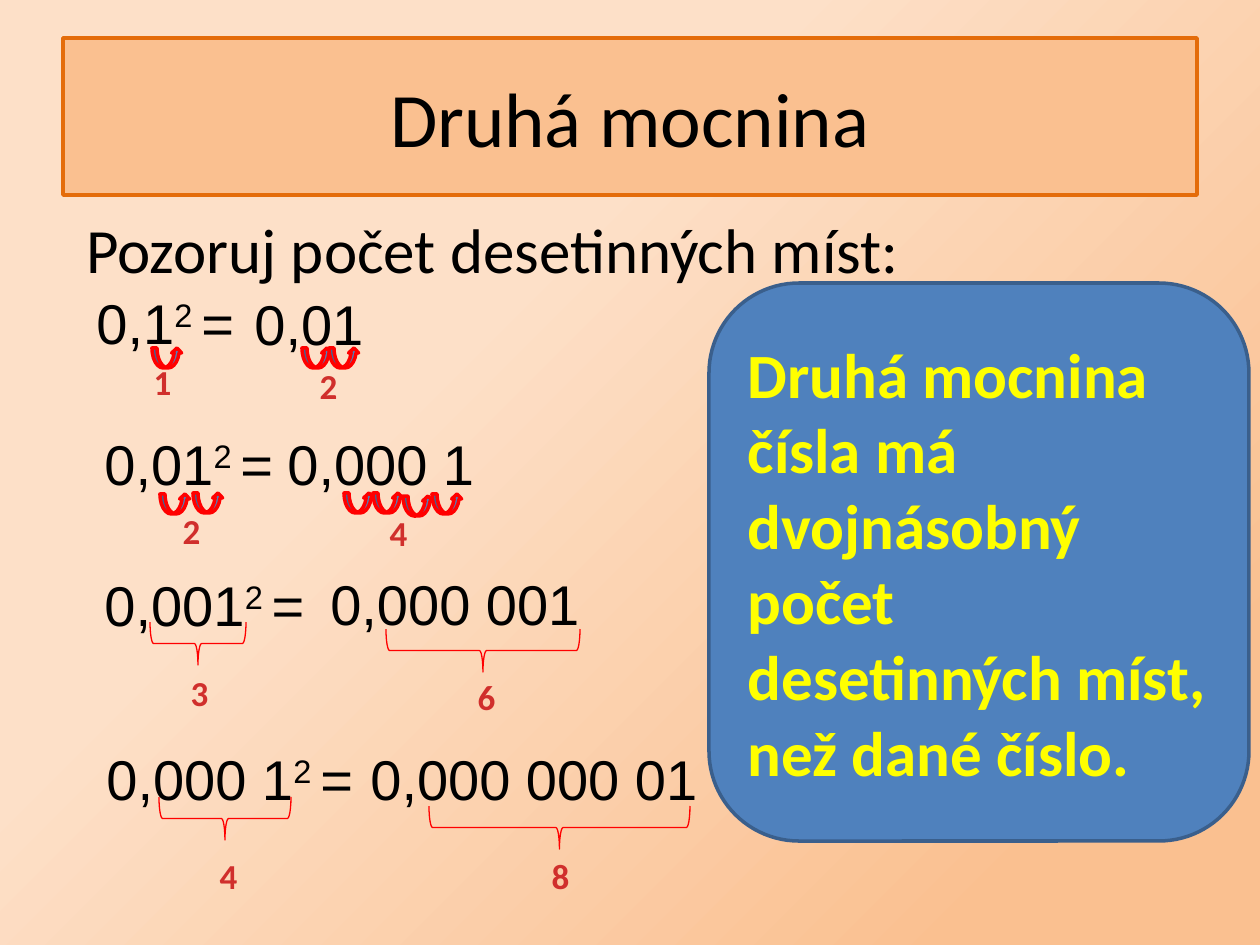
from dataclasses import dataclass

from lxml.etree import Element
from pptx import Presentation
from pptx.dml.color import RGBColor
from pptx.enum.shapes import MSO_SHAPE
from pptx.enum.text import MSO_ANCHOR, MSO_AUTO_SIZE, PP_ALIGN
from pptx.oxml.ns import qn
from pptx.util import Pt

PX = 914400 / 126


@dataclass(frozen=True)
class Theme:
    pale: str = "FDE0C8"
    peach: str = "FAC090"
    rust: str = "E46C0A"
    blue: str = "4F81BD"
    navy: str = "3A5F8C"
    red: str = "FF0000"
    brick: str = "D02F2C"
    yellow: str = "FFFF00"
    black: str = "000000"
    head: int = 44
    lead: int = 36
    math: int = 32
    count: int = 20
    sans: str = "Calibri"
    digits: str = "Arial"


T = Theme()

# left, top, width of each power, its base; left, top, width of its result, its value
ROWS = [
    (84, 282, 169, "0,1", 242, 283, 135, "0,01"),
    (92, 423, 200, "0,01", 275, 423, 229, "0,000 1"),
    (92, 564, 231, "0,001", 318, 563, 276, "0,000 001"),
    (94, 738, 294, "0,000 1", 358, 738, 406, "0,000 000 01"),
]
HOPS = [(152, 348), (302, 348), (329, 348), (160, 494), (193, 493),
        (344, 493), (373, 493), (403, 496), (432, 494)]
BRACES = [(150, 622, 96), (386, 629, 194), (429, 806, 261), (159, 797, 132)]
COUNTS = [(141, 354, "1"), (307, 358, "2"), (170, 503, "2"), (377, 505, "4"),
          (178, 665, "3"), (465, 669, "6"), (207, 848, "4"), (539, 848, "8")]


def emu(*sizes):
    return [round(size * PX) for size in sizes]


def rgb(color):
    return RGBColor.from_string(color)


def style(para, size, color, face=T.sans, bold=False, align=PP_ALIGN.LEFT):
    para.alignment = align
    font = para.font
    font.name, font.size, font.bold = face, Pt(size), bold
    font.color.rgb = rgb(color)


def paint(shape, fill, line, width):
    if fill:
        shape.fill.solid()
        shape.fill.fore_color.rgb = rgb(fill)
    else:
        shape.fill.background()
    shape.line.color.rgb = rgb(line)
    shape.line.width = Pt(width)


def add_form(slide, kind, box, fill, line, width):
    shape = slide.shapes.add_shape(kind, *emu(*box))
    shape.shadow.inherit = False
    paint(shape, fill, line, width)
    return shape


def add_text(slide, box, text, wrap=False, **look):
    """Add a one-line text box and return its paragraph."""
    frame = slide.shapes.add_textbox(*emu(*box)).text_frame
    frame.word_wrap = wrap
    frame.auto_size = MSO_AUTO_SIZE.SHAPE_TO_FIT_TEXT
    para = frame.paragraphs[0]
    para.text = text
    style(para, **look)
    return para


def add_power(slide, box, base):
    """Write the base, a raised 2 and an equals sign."""
    para = add_text(slide, box, base, size=T.math, color=T.black, face=T.digits)
    power = para.add_run()
    power.text = "2 "
    power._r.get_or_add_rPr().set("baseline", "30000")
    para.add_run().text = "="


def add_brace(slide, left, top, width, depth=43):
    """Add a brace that opens upward; the box is given as seen after turning."""
    shift = (width - depth) / 2
    box = (left + shift, top - shift, depth, width)
    brace = add_form(slide, MSO_SHAPE.LEFT_BRACE, box, None, T.red, 0.75)
    brace.rotation = 270


def set_ground(slide):
    fill = slide.background.fill
    fill.gradient()
    fill.gradient_angle = 315
    for stop, place, color in zip(fill.gradient_stops, (0.36, 0.86), (T.pale, T.peach)):
        stop.position = place
        stop.color.rgb = rgb(color)


def set_title(slide, text):
    title = slide.shapes.title
    title.left, title.top, title.width, title.height = emu(63, 38, 1134, 157)
    form = Element(qn("a:prstGeom"), prst="roundRect")
    form.append(Element(qn("a:avLst")))
    title._element.spPr.append(form)
    paint(title, T.peach, T.rust, 2)
    title.text_frame.text = text
    title.text_frame.vertical_anchor = MSO_ANCHOR.MIDDLE
    style(title.text_frame.paragraphs[0], T.head, T.black, align=PP_ALIGN.CENTER)


def add_rule(slide, text):
    box = (709, 283, 540, 558)
    frame = add_form(slide, MSO_SHAPE.ROUNDED_RECTANGLE, box, T.blue, T.navy, 2).text_frame
    frame.word_wrap = True
    frame.vertical_anchor = MSO_ANCHOR.MIDDLE
    frame.paragraphs[0].text = text
    style(frame.paragraphs[0], T.lead, T.yellow, bold=True)


def main():
    deck = Presentation()
    deck.slide_width, deck.slide_height = emu(1260, 945)
    slide = deck.slides.add_slide(deck.slide_layouts[5])
    set_ground(slide)
    set_title(slide, "Druhá mocnina")
    for left, top, text in COUNTS:
        add_text(slide, (left, top, 43, 55), text, size=T.count, color=T.brick,
                 bold=True, align=PP_ALIGN.CENTER)
    for left, top in HOPS:
        add_form(slide, MSO_SHAPE.CURVED_UP_ARROW, (left, top, 30, 20), T.blue, T.red, 2)
    for left, top, width, base, x, y, span, value in ROWS:
        add_power(slide, (left, top, width, 81), base)
        add_text(slide, (x, y, span, 81), value, size=T.math, color=T.black, face=T.digits)
    add_text(slide, (74, 204, 1097, 89), "Pozoruj počet desetinných míst:", wrap=True,
             size=T.lead, color=T.black)
    for brace in BRACES:
        add_brace(slide, *brace)
    add_rule(slide, "Druhá mocnina čísla má dvojnásobný \vpočet desetinných míst, než dané číslo.")
    deck.save("out.pptx")


if __name__ == "__main__":
    main()
